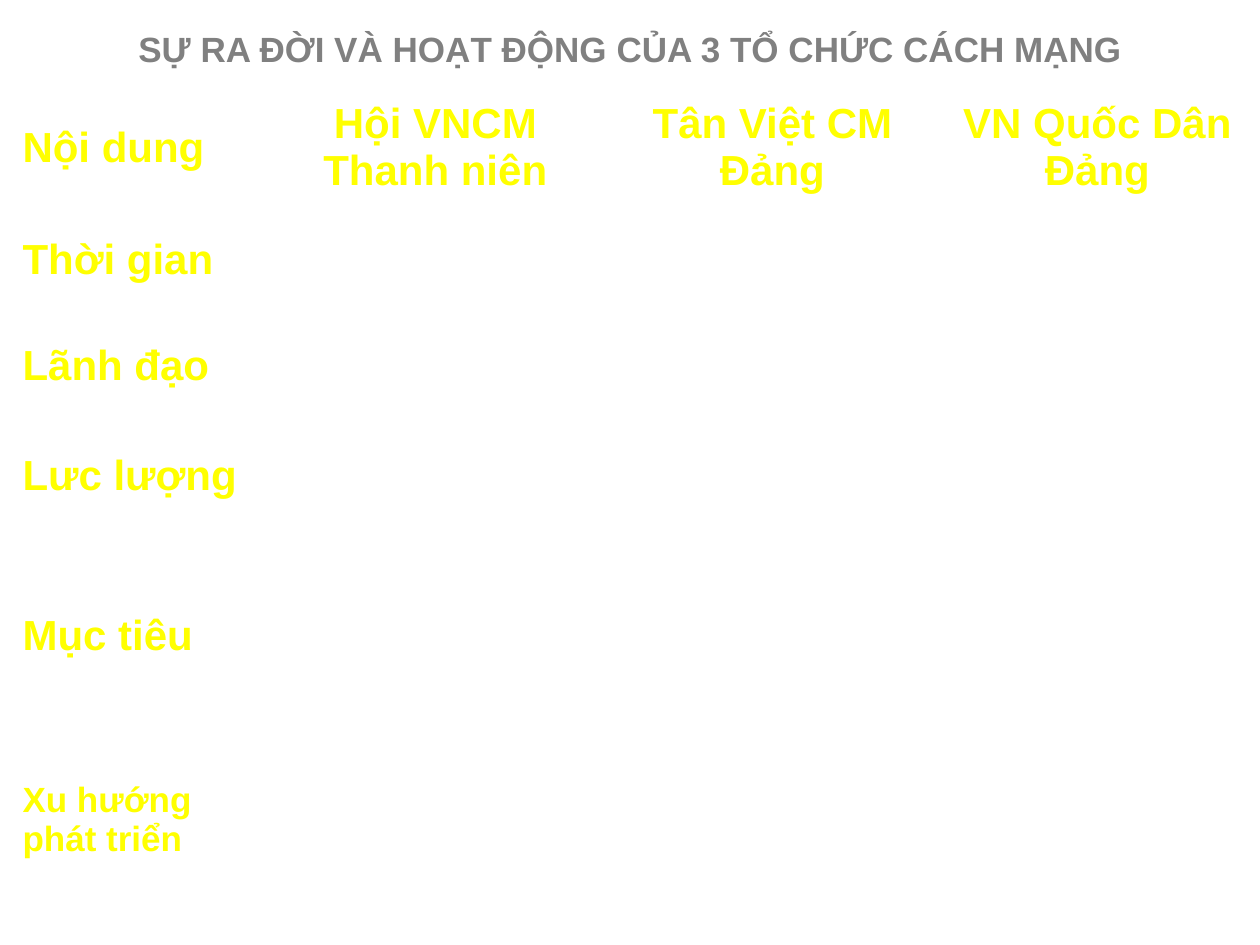
from lxml import etree
from pptx import Presentation
from pptx.dml.color import RGBColor
from pptx.enum.text import MSO_ANCHOR, PP_ALIGN
from pptx.oxml.ns import qn
from pptx.util import Cm, Pt

MIDDLE = MSO_ANCHOR.MIDDLE
CENTER = PP_ALIGN.CENTER
WHITE = RGBColor(0xFF, 0xFF, 0xFF)
YELLOW = RGBColor(0xFF, 0xFF, 0x00)
GREY = RGBColor(0x80, 0x80, 0x80)

TITLE = "SỰ RA ĐỜI VÀ HOẠT ĐỘNG CỦA 3 TỔ CHỨC CÁCH MẠNG"
ORGANISATIONS = ["Hội VNCM Thanh niên", "Tân Việt CM Đảng", "VN Quốc Dân Đảng"]
TOPICS = ["Nội dung", "Thời gian", "Lãnh đạo", "Lưc lượng", "Mục tiêu",
          "Xu hướng phát triển"]
COL_WIDTHS = [5.08, 6.99, 6.6, 6.5]
ROW_HEIGHTS = [1.8, 2.39, 1.9, 2.54, 3.91, 3.48]
OUTER, INNER = Pt(2.25), Pt(1)


def write(tf, text, size, color):
    tf.word_wrap = True
    p = tf.paragraphs[0]
    p.text = text
    p.font.name = "Arial"
    p.font.size = Pt(size)
    p.font.bold = True
    p.font.color.rgb = color
    return p


def add_border(cell, side, width):
    """Draw one side (L, R, T or B) of a cell; call in that order."""
    ln = etree.SubElement(cell._tc.get_or_add_tcPr(), qn(f"a:ln{side}"), w=str(width))
    fill = etree.SubElement(ln, qn("a:solidFill"))
    etree.SubElement(fill, qn("a:srgbClr"), val=str(WHITE))


prs = Presentation()
prs.slide_width, prs.slide_height = Cm(25.4), Cm(19.05)
s = prs.slides.add_slide(prs.slide_layouts[6])
s.background.fill.solid()
s.background.fill.fore_color.rgb = WHITE

# Comparison table
last_row, last_col = len(ROW_HEIGHTS) - 1, len(COL_WIDTHS) - 1
table = s.shapes.add_table(len(ROW_HEIGHTS), len(COL_WIDTHS), Cm(0.2), Cm(1.9),
                           Cm(sum(COL_WIDTHS)), Cm(sum(ROW_HEIGHTS))).table
table.first_row = False
table.horz_banding = False
for col, width in zip(table.columns, COL_WIDTHS):
    col.width = Cm(width)

for i, height in enumerate(ROW_HEIGHTS):
    table.rows[i].height = Cm(height)
    for j in range(len(COL_WIDTHS)):
        cell = table.cell(i, j)
        on_edge = {"L": j == 0, "R": j == last_col, "T": i == 0, "B": i == last_row}
        for side, outer in on_edge.items():
            add_border(cell, side, OUTER if outer else INNER)
        cell.fill.background()

for i, topic in enumerate(TOPICS):
    cell = table.cell(i, 0)
    cell.vertical_anchor = MIDDLE
    write(cell.text_frame, topic, 20 if i == last_row else 24, YELLOW)
for j, name in enumerate(ORGANISATIONS, 1):
    p = write(table.cell(0, j).text_frame, name, 24, YELLOW)
    p.alignment = CENTER

# Title
title = s.shapes.add_textbox(Cm(2.54), Cm(0.43), Cm(20.96), Cm(1.1))
write(title.text_frame, TITLE, 20, GREY)

prs.save("out.pptx")
